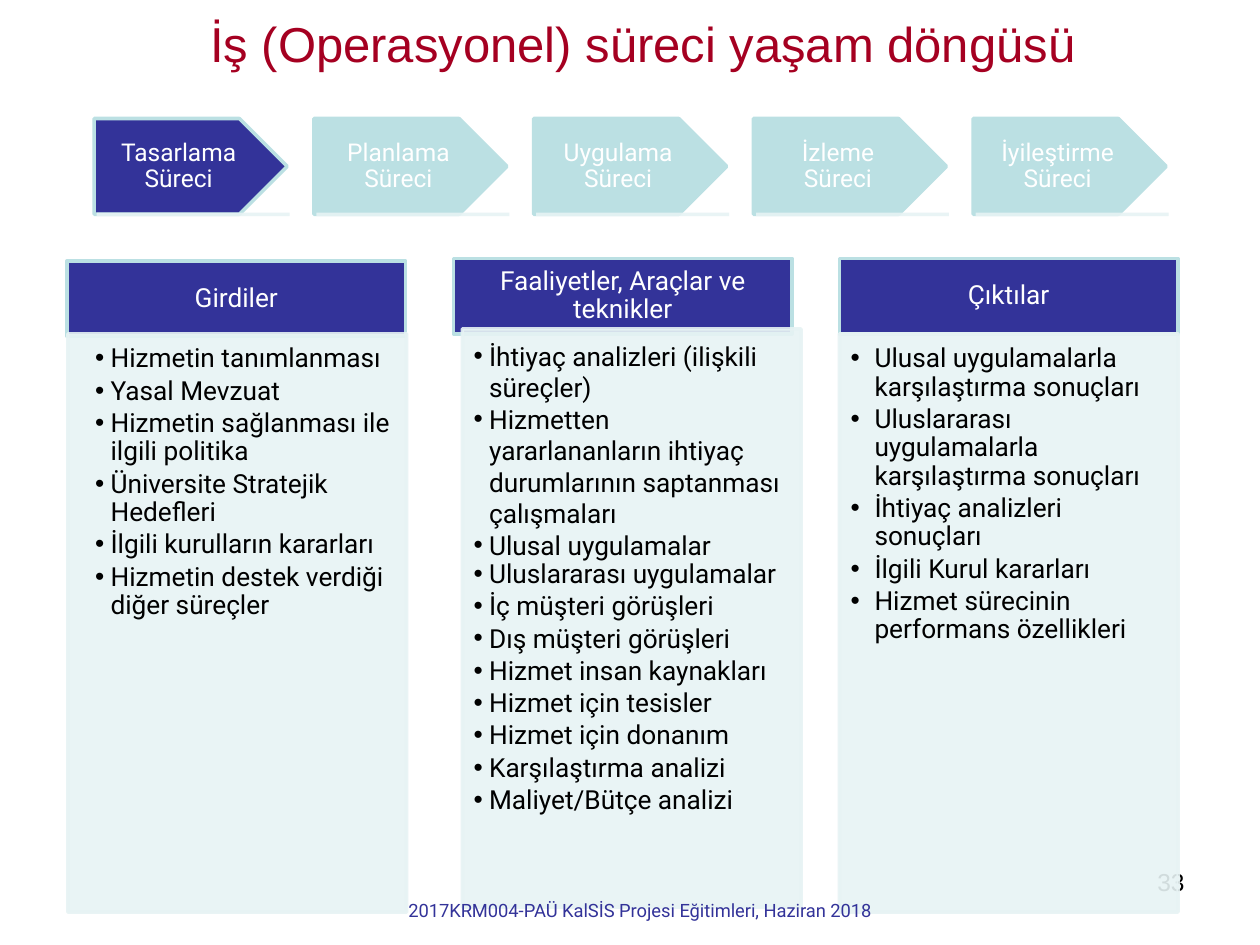
from dataclasses import dataclass

import pptx
import pptx.dml.color
import pptx.enum.shapes
import pptx.enum.text
import pptx.util
from lxml import etree
from pptx.oxml.ns import qn

Cm = pptx.util.Cm
Pt = pptx.util.Pt
RGBColor = pptx.dml.color.RGBColor
Align = pptx.enum.text.PP_ALIGN
Anchor = pptx.enum.text.MSO_ANCHOR
Preset = pptx.enum.shapes.MSO_SHAPE

NAVY = RGBColor(0x33, 0x33, 0x99)
AQUA = RGBColor(0xBB, 0xE0, 0xE3)
MIST = RGBColor(0xE7, 0xF3, 0xF4)
CRIMSON = RGBColor(0xA5, 0x00, 0x21)
WHITE = RGBColor(0xFF, 0xFF, 0xFF)
BLACK = RGBColor(0x00, 0x00, 0x00)

STEP_LEFT, STEP_TOP, STEP_PITCH = 1.9, 2.39, 4.43
STEP_WIDTH, STEP_HEIGHT = 3.89, 1.93
COLUMN_WIDTH, HEADING_HEIGHT, BODY_HEIGHT = 6.83, 1.52, 11.66


@dataclass(frozen=True)
class Box:
    left: float
    top: float
    width: float
    height: float

    def lengths(self) -> tuple:
        return Cm(self.left), Cm(self.top), Cm(self.width), Cm(self.height)


@dataclass(frozen=True)
class Style:
    size: float
    color: RGBColor
    font: str = "Roboto"
    align: Align = Align.CENTER


@dataclass(frozen=True)
class Column:
    heading: str
    heading_left: float
    heading_top: float
    body_left: float
    body_top: float
    margin: float
    hanging: float
    items: tuple[str, ...]
    loose_items: int = 0


STEPS = ("Tasarlama Süreci", "Planlama Süreci", "Uygulama Süreci",
         "İzleme Süreci", "İyileştirme Süreci")

COLUMNS = (
    Column("Girdiler", 1.35, 5.26, 1.37, 6.73, 0.63, 0.31, (
        "Hizmetin tanımlanması",
        "Yasal Mevzuat",
        "Hizmetin sağlanması ile ilgili politika",
        "Üniversite Stratejik Hedefleri",
        "İlgili kurulların kararları",
        "Hizmetin destek verdiği diğer süreçler",
    )),
    Column("Faaliyetler, Araçlar ve teknikler", 9.14, 5.21, 9.32, 6.63, 0.31, 0.31, (
        "İhtiyaç analizleri (ilişkili süreçler)",
        "Hizmetten yararlananların ihtiyaç durumlarının saptanması çalışmaları",
        "Ulusal uygulamalar",
        "Uluslararası uygulamalar",
        "İç müşteri görüşleri",
        "Dış müşteri görüşleri",
        "Hizmet insan kaynakları",
        "Hizmet için tesisler",
        "Hizmet için donanım",
        "Karşılaştırma analizi",
        "Maliyet/Bütçe analizi",
    ), loose_items=3),
    Column("Çıktılar", 16.92, 5.21, 16.92, 6.73, 0.48, 0.48, (
        "Ulusal uygulamalarla karşılaştırma sonuçları",
        "Uluslararası uygulamalarla karşılaştırma sonuçları",
        "İhtiyaç analizleri sonuçları",
        "İlgili Kurul kararları",
        "Hizmet sürecinin performans özellikleri",
    )),
)


def format_paragraph(paragraph, style: Style) -> None:
    paragraph.alignment = style.align
    for run in paragraph.runs:
        run.font.size = Pt(style.size)
        run.font.name = style.font
        run.font.color.rgb = style.color


def set_insets(frame, left: float, top: float, right: float, bottom: float) -> None:
    frame.margin_left, frame.margin_top = Cm(left), Cm(top)
    frame.margin_right, frame.margin_bottom = Cm(right), Cm(bottom)


def make_translucent(element) -> None:
    for color in element.iter(qn("a:srgbClr")):
        etree.SubElement(color, qn("a:alpha")).set("val", "90000")


def add_caption(slide, text: str, box: Box, style: Style) -> None:
    frame = slide.shapes.add_textbox(*box.lengths()).text_frame
    frame.word_wrap = True
    frame.text = text
    format_paragraph(frame.paragraphs[0], style)


def add_block(slide, preset: Preset, box: Box, fill: RGBColor, outline: RGBColor):
    block = slide.shapes.add_shape(preset, *box.lengths())
    block.shadow.inherit = False
    block.fill.solid()
    block.fill.fore_color.rgb = fill
    block.line.color.rgb = outline
    block.line.width = Pt(2)
    block.text_frame.word_wrap = True
    return block


def add_label(block, text: str, size: float, side: float, edge: float) -> None:
    frame = block.text_frame
    set_insets(frame, side, edge, side, edge)
    frame.vertical_anchor = Anchor.MIDDLE
    frame.text = text
    frame.paragraphs[0].line_spacing = 0.9
    format_paragraph(frame.paragraphs[0], Style(size, WHITE))


def add_step(slide, index: int, text: str) -> None:
    left = STEP_LEFT + index * STEP_PITCH
    arrow = add_block(slide, Preset.PENTAGON, Box(left, STEP_TOP, STEP_WIDTH, STEP_HEIGHT),
                      NAVY if index == 0 else AQUA, AQUA)
    add_label(arrow, text, 14, 0.28, 0.15)
    base = STEP_TOP + STEP_HEIGHT
    underline = slide.shapes.add_connector(
        pptx.enum.shapes.MSO_CONNECTOR.STRAIGHT,
        Cm(left + 0.05), Cm(base), Cm(left + 0.05 + STEP_WIDTH), Cm(base))
    underline.line.color.rgb = MIST
    underline.line.width = Pt(2)
    properties = underline._element.spPr
    make_translucent(properties)
    etree.SubElement(properties, qn("a:effectLst"))


def add_bullet(paragraph, margin: float, hanging: float) -> None:
    properties = paragraph._p.get_or_add_pPr()
    properties.set("marL", str(Cm(margin)))
    properties.set("indent", str(-Cm(hanging)))
    etree.SubElement(properties, qn("a:buFont")).set("typeface", "Arial")
    etree.SubElement(properties, qn("a:buChar")).set("char", "•")


def add_column(slide, column: Column) -> None:
    heading = add_block(
        slide, Preset.RECTANGLE,
        Box(column.heading_left, column.heading_top, COLUMN_WIDTH, HEADING_HEIGHT), NAVY, AQUA)
    add_label(heading, column.heading, 15, 0.3, 0.18)
    body = add_block(
        slide, Preset.RECTANGLE,
        Box(column.body_left, column.body_top, COLUMN_WIDTH, BODY_HEIGHT), MIST, MIST)
    make_translucent(body._element.spPr)
    frame = body.text_frame
    set_insets(frame, 0.23, 0.23, 0.3, 0.33)
    frame.vertical_anchor = Anchor.TOP
    frame.text = "\n".join(column.items)
    for index, paragraph in enumerate(frame.paragraphs):
        add_bullet(paragraph, column.margin, column.hanging)
        if index >= column.loose_items:
            paragraph.level = 1
            paragraph.line_spacing = 0.9
            paragraph.space_after = Pt(2.25)
        format_paragraph(paragraph, Style(15, BLACK, align=Align.LEFT))


def main() -> None:
    deck = pptx.Presentation()
    deck.slide_width, deck.slide_height = Cm(25.4), Cm(19.05)
    slide = deck.slides.add_slide(deck.slide_layouts[6])
    add_caption(slide, "33", Box(18.21, 17.35, 5.92, 1.32),
                Style(14, BLACK, "Arial", Align.RIGHT))
    for index, step in enumerate(STEPS):
        add_step(slide, index, step)
    for column in COLUMNS:
        add_column(slide, column)
    add_caption(slide, "2017KRM004-PAÜ KalSİS Projesi Eğitimleri, Haziran 2018",
                Box(7.29, 18.01, 11.23, 0.79), Style(10.5, NAVY))
    add_caption(slide, "İş (Operasyonel) süreci yaşam döngüsü",
                Box(3.99, 0.15, 18.47, 1.45), Style(28, CRIMSON, "Arial", Align.LEFT))
    deck.save("out.pptx")


if __name__ == "__main__":
    main()
